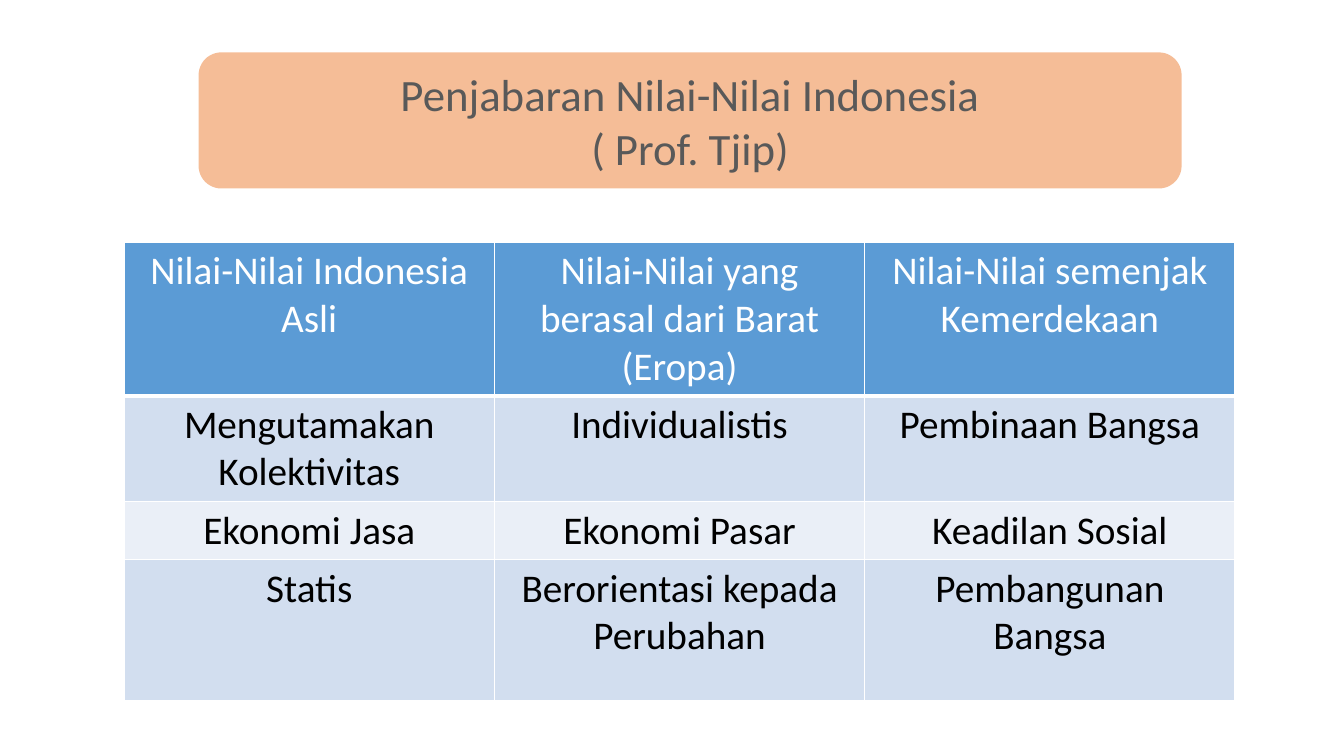
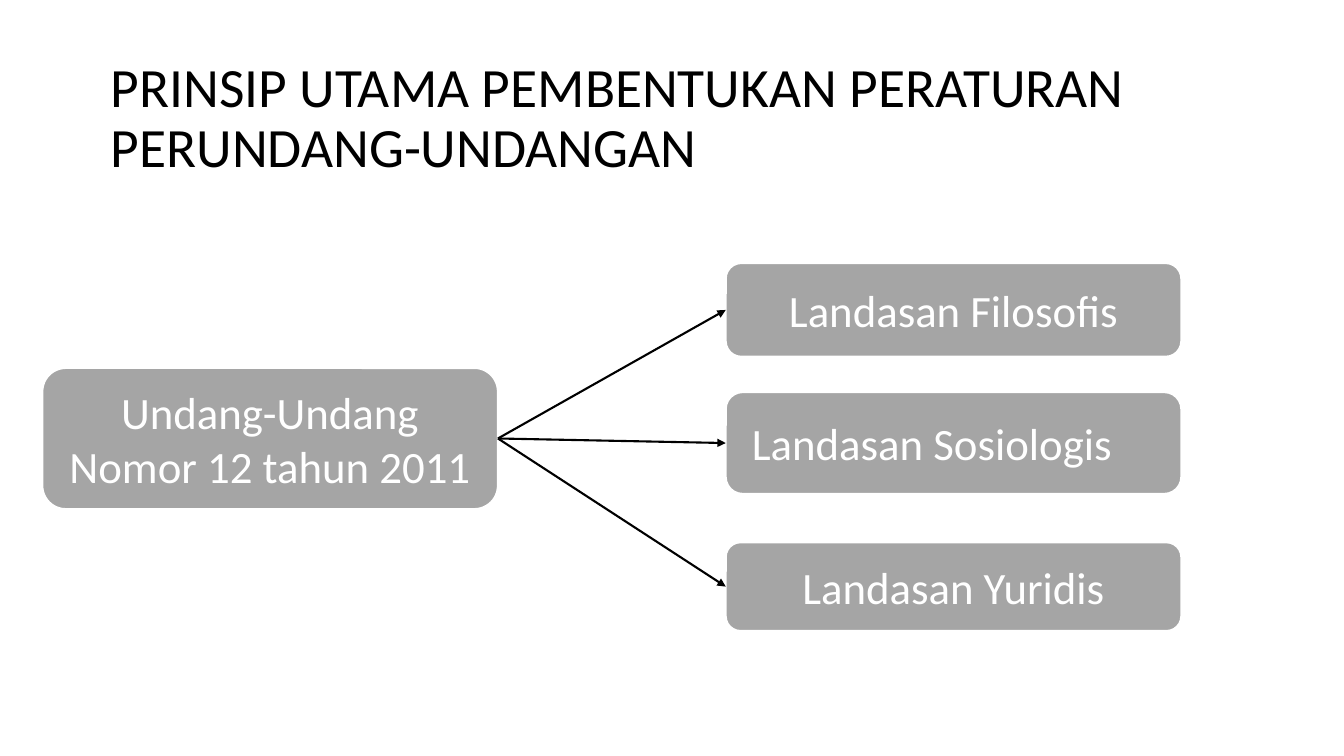
from lxml import etree
from pptx import Presentation, util as u
from pptx.dml.color import RGBColor
from pptx.enum import shapes, text
from pptx.oxml import ns

C = {"white": "FFFFFF", "black": "000000", "grey": "A5A5A5", "dark": "595959",
     "orange": "ED7D31", "blue": "5B9BD5", "band": "D2DEEF", "pale": "EAEFF7"}
FONT = "Calibri"
CENTER, LEFT = text.PP_ALIGN.CENTER, text.PP_ALIGN.LEFT

prs = Presentation()
prs.slide_width, prs.slide_height = u.Inches(13.33), u.Inches(7.5)
W, H = prs.slide_width, prs.slide_height
title_only = prs.slide_layouts[5]


def share(x, y, w, h):
    """Turn percentages of the slide into left, top, width, height."""
    return [int(v * side / 100) for v, side in zip((x, y, w, h), (W, H, W, H))]


def write(tf, words, size, color, align=CENTER, anchor=text.MSO_ANCHOR.MIDDLE, spacing=1.0):
    """Fill a text frame and format all of its runs."""
    tf.text = words
    tf.word_wrap = True
    tf.vertical_anchor = anchor
    for p in tf.paragraphs:
        p.alignment = align
        p.line_spacing = spacing
        for r in p.runs:
            r.font.name, r.font.size = FONT, u.Pt(size)
            r.font.color.rgb = RGBColor.from_string(C[color])


# Slide 1: title on a translucent band
s = prs.slides.add_slide(title_only)
title = s.shapes.title
title.left, title.top, title.width, title.height = share(14.78, 6.93, 73.14, 18)
title.text_frame.auto_size = text.MSO_AUTO_SIZE.NONE
write(title.text_frame, "Penjabaran Nilai-Nilai Indonesia\n( Prof. Tjip)", 32, "dark")

band = s.shapes.add_shape(shapes.MSO_SHAPE.ROUNDED_RECTANGLE,
                          title.left, title.top, title.width, title.height)
band.shadow.inherit = False
band.fill.solid()
band.fill.fore_color.rgb = RGBColor.from_string(C["orange"])
band.line.fill.background()
srgb = band.element.spPr.find(".//" + ns.qn("a:srgbClr"))
etree.SubElement(srgb, ns.qn("a:alpha"), val="50000")
title.element.addprevious(band.element)

# Slide 1: table of values
rows = [
    ("Nilai-Nilai Indonesia Asli", "Nilai-Nilai yang berasal dari Barat (Eropa)",
     "Nilai-Nilai semenjak Kemerdekaan"),
    ("Mengutamakan Kolektivitas", "Individualistis", "Pembinaan Bangsa"),
    ("Ekonomi Jasa", "Ekonomi Pasar", "Keadilan Sosial"),
    ("Statis", "Berorientasi kepada Perubahan", "Pembangunan Bangsa"),
]
row_heights = [1.4, 0.98, 0.57, 1.4]
row_fills = ["blue", "band", "pale", "band"]
table = s.shapes.add_table(len(rows), len(rows[0]), *share(9.23, 32, 82.66, 58)).table
for i, row in enumerate(rows):
    table.rows[i].height = u.Inches(row_heights[i])
    for j, words in enumerate(row):
        cell = table.cell(i, j)
        write(cell.text_frame, words, 28, "black" if i else "white")
        cell.vertical_anchor = text.MSO_ANCHOR.TOP
        cell.fill.solid()
        cell.fill.fore_color.rgb = RGBColor.from_string(C[row_fills[i]])
        tcPr = cell._tc.get_or_add_tcPr()
        for k, side in enumerate("LRTB"):
            points = 3 if i == 0 and side == "B" else 1
            ln = etree.Element(ns.qn("a:ln" + side), w=str(u.Pt(points)))
            fill = etree.SubElement(ln, ns.qn("a:solidFill"))
            etree.SubElement(fill, ns.qn("a:srgbClr"), val=C["white"])
            tcPr.insert(k, ln)

# Slide 2: title
s = prs.slides.add_slide(title_only)
title = s.shapes.title
title.left, title.top, title.width, title.height = share(7.5, 7.2, 85.15, 17.33)
title.text_frame.auto_size = text.MSO_AUTO_SIZE.NONE
write(title.text_frame, "PRINSIP UTAMA PEMBENTUKAN PERATURAN PERUNDANG-UNDANGAN",
      39.6, "black", LEFT, spacing=0.9)

# Slide 2: the law and its three foundations (text, left, top, height)
boxes = []
for words, x, y, h in [
    ("Undang-Undang Nomor 12 tahun 2011", 3.15, 48.67, 18.67),
    ("Landasan Filosofis", 54, 34.8, 12.4),
    ("Landasan Sosiologis\t", 54, 51.87, 13.47),
    ("Landasan Yuridis", 54, 71.73, 11.73),
]:
    box = s.shapes.add_shape(shapes.MSO_SHAPE.ROUNDED_RECTANGLE, *share(x, y, 33.9, h))
    box.shadow.inherit = False
    box.fill.solid()
    box.fill.fore_color.rgb = RGBColor.from_string(C["grey"])
    box.line.color.rgb = RGBColor.from_string(C["white"])
    box.line.width = u.Pt(1.5)
    write(box.text_frame, words, 32, "white")
    boxes.append(box)

# Slide 2: arrows from the law to each foundation
law, *foundations = boxes
for foundation in foundations:
    arrow = s.shapes.add_connector(shapes.MSO_CONNECTOR.STRAIGHT, 0, 0, 0, 0)
    arrow.begin_connect(law, 3)
    arrow.end_connect(foundation, 1)
    arrow.line.color.rgb = RGBColor.from_string(C["black"])
    arrow.line.width = u.Pt(1.5)
    etree.SubElement(arrow.line._get_or_add_ln(), ns.qn("a:tailEnd"), type="triangle")
    etree.SubElement(arrow._element.spPr, ns.qn("a:effectLst"))

prs.save("out.pptx")
